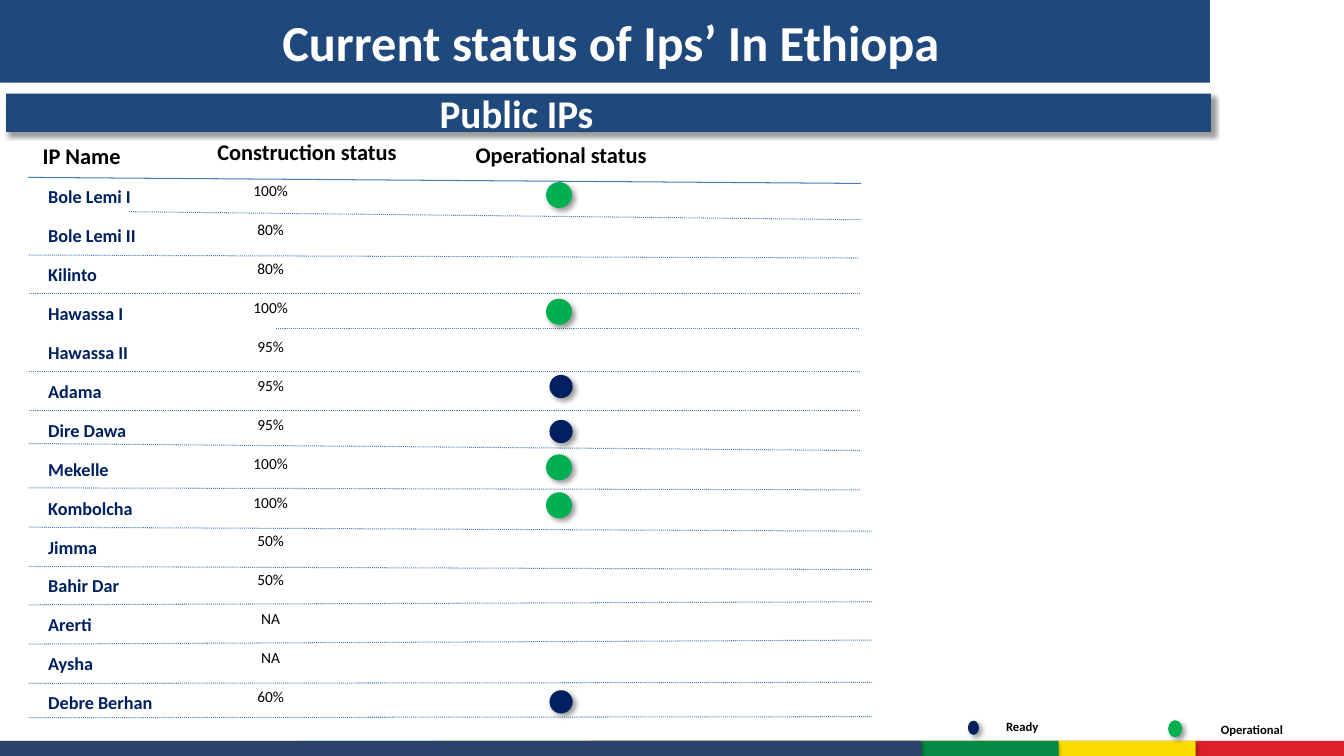
import pptx
import pptx.util
import pptx.dml.color
import pptx.enum.dml
import pptx.enum.shapes
import pptx.enum.text
import lxml.etree

TITLE = "Current status of Ips’ In Ethiopa"
BAND = "Public IPs"
HEADS = [
    ("IP Name", 0.26, 1.36, 1.1),
    ("Construction status", 1.92, 1.32, 2.25),
    ("Operational status", 4.44, 1.35, 2.25),
]
ROWS = [
    ("Bole Lemi I", "100%", "open", 0.07, (1.28, 2.1, 8.54, 2.18)),
    ("Bole Lemi II", "80%", None, 0, (0.29, 2.53, 8.52, 2.56)),
    ("Kilinto", "80%", None, 0, (0.29, 2.91, 8.54, 2.91)),
    ("Hawassa I", "100%", "open", 0.07, (2.74, 3.26, 8.52, 3.26)),
    ("Hawassa II", "95%", None, 0, (0.29, 3.69, 8.54, 3.69)),
    ("Adama", "95%", "ready", 0.04, (0.29, 4.07, 8.54, 4.07)),
    ("Dire Dawa", "95%", "ready", 0.1, (0.29, 4.4, 8.54, 4.47)),
    ("Mekelle", "100%", "open", 0.07, (0.29, 4.84, 8.54, 4.86)),
    ("Kombolcha", "100%", "open", 0.06, (0.29, 5.23, 8.65, 5.27)),
    ("Jimma", "50%", None, 0, (0.29, 5.62, 8.65, 5.65)),
    ("Bahir Dar", "50%", None, 0, (0.29, 6, 8.65, 5.97)),
    ("Arerti", "NA", None, 0, (0.29, 6.39, 8.65, 6.35)),
    ("Aysha", "NA", None, 0, (0.29, 6.78, 8.65, 6.77)),
    ("Debre Berhan", "60%", "ready", 0.08, (0.29, 7.12, 8.65, 7.11)),
]
KEYS = [
    ("Ready", "ready", 9.6, 7.15, 9.88, 7.08, 1.01),
    ("Operational", "open", 11.6, 7.16, 12.01, 7.11, 0.94),
]
STRIPES = [
    (5.85, 7.55, "DC2028"),
    (4.31, 7.55, "F9DD00"),
    (2.95, 7.55, "058A44"),
    (0, 9.14, "2B426E"),
]
DOTS = {"open": (5.43, "00B050"), "ready": (5.45, "002060")}
BLUE, NAVY, WHITE, BLACK, RULE = "1F497D", "002060", "FFFFFF", "000000", "4B7EBC"
TOP, STEP = 1.75, 0.386
SOFT, DEEP = (35, 3.1, 1.8, 90), (40, 4, 3, 45)

inch = pptx.util.Inches
kinds = pptx.enum.shapes.MSO_SHAPE
align = pptx.enum.text.PP_ALIGN
anchor = pptx.enum.text.MSO_ANCHOR
NS = "http://schemas.openxmlformats.org/drawingml/2006/main"

deck = pptx.Presentation()
deck.slide_width, deck.slide_height = inch(13.33), inch(7.5)
page = deck.slides.add_slide(deck.slide_layouts[6])


def tint(code):
    return pptx.dml.color.RGBColor.from_string(code)


def node(up, tag, **attrs):
    return lxml.etree.SubElement(up, f"{{{NS}}}{tag}", attrs)


def shade(shape, look):
    alpha, blur, dist, turn = look
    shape.shadow.inherit = False
    hold = shape._element.spPr.find(f"{{{NS}}}effectLst")
    cast = node(hold, "outerShdw", blurRad=str(int(blur * 12700)),
                dist=str(int(dist * 12700)), dir=str(turn * 60000),
                algn="tl", rotWithShape="0")
    node(node(cast, "srgbClr", val=BLACK), "alpha", val=str(alpha * 1000))


def block(kind, box, fill, look=None, edge=0):
    shape = page.shapes.add_shape(kind, *map(inch, box))
    shape.fill.solid()
    shape.fill.fore_color.rgb = tint(fill)
    if edge:
        shape.line.color.rgb = tint(fill)
        shape.line.width = pptx.util.Pt(edge)
    else:
        shape.line.fill.background()
    shape.shadow.inherit = False
    if look:
        shade(shape, look)
    return shape


def write(shape, text, size, color, bold=True, side=align.LEFT,
          hang=anchor.TOP, inset=0.1):
    frame = shape.text_frame
    frame.word_wrap = True
    frame.vertical_anchor = hang
    frame.margin_left = inch(inset)
    para = frame.paragraphs[0]
    para.alignment = side
    run = para.add_run()
    run.text = text
    font = run.font
    font.name, font.size, font.bold = "Calibri", pptx.util.Pt(size), bold
    font.color.rgb = tint(color)


def label(box, *args, **opts):
    write(page.shapes.add_textbox(*map(inch, box)), *args, **opts)


def dot(state, x, y, w, h):
    edge = 2 if state == "open" else 0
    block(kinds.FLOWCHART_CONNECTOR, (x, y, w, h), DOTS[state][1], DEEP, edge)


def rule(ends, dash=True):
    line = page.shapes.add_connector(
        pptx.enum.shapes.MSO_CONNECTOR.STRAIGHT, *map(inch, ends))
    line.line.color.rgb = tint(RULE)
    line.line.width = pptx.util.Pt(0.75)
    if dash:
        line.line.dash_style = pptx.enum.dml.MSO_LINE.ROUND_DOT
    node(line._element.spPr, "effectLst")


for x, w, color in STRIPES:
    block(kinds.RECTANGLE, (x, 7.35, w, 0.27), color, SOFT)

band = block(kinds.RECTANGLE, (0.06, 0.93, 11.95, 0.38), BLUE, DEEP)
write(band, BAND, 28, WHITE, hang=anchor.MIDDLE, inset=4.3)
for text, x, y, w in HEADS:
    label((x, y, w, 0.38), text, 16, BLACK, side=align.CENTER)
rule((0.28, 1.76, 8.54, 1.82), dash=False)

for i, (name, built, state, drop, ends) in enumerate(ROWS):
    y = TOP + i * STEP
    label((0.38, y + 0.04, 1.27, 0.32), name, 13, NAVY, hang=anchor.MIDDLE)
    label((1.78, y, 1.81, 0.31), built, 11, BLACK, bold=False,
          side=align.CENTER)
    rule(ends)
    if state:
        dot(state, DOTS[state][0], y + drop, 0.23, 0.23)

for text, state, x, y, left, top, w in KEYS:
    dot(state, x, y, 0.11, 0.14)
    label((left, top, w, 0.26), text, 9, BLACK)

head = block(kinds.RECTANGLE, (0, 0, 12, 0.82), BLUE)
write(head, TITLE, 36, WHITE, hang=anchor.MIDDLE, inset=2.8)

deck.save("out.pptx")
